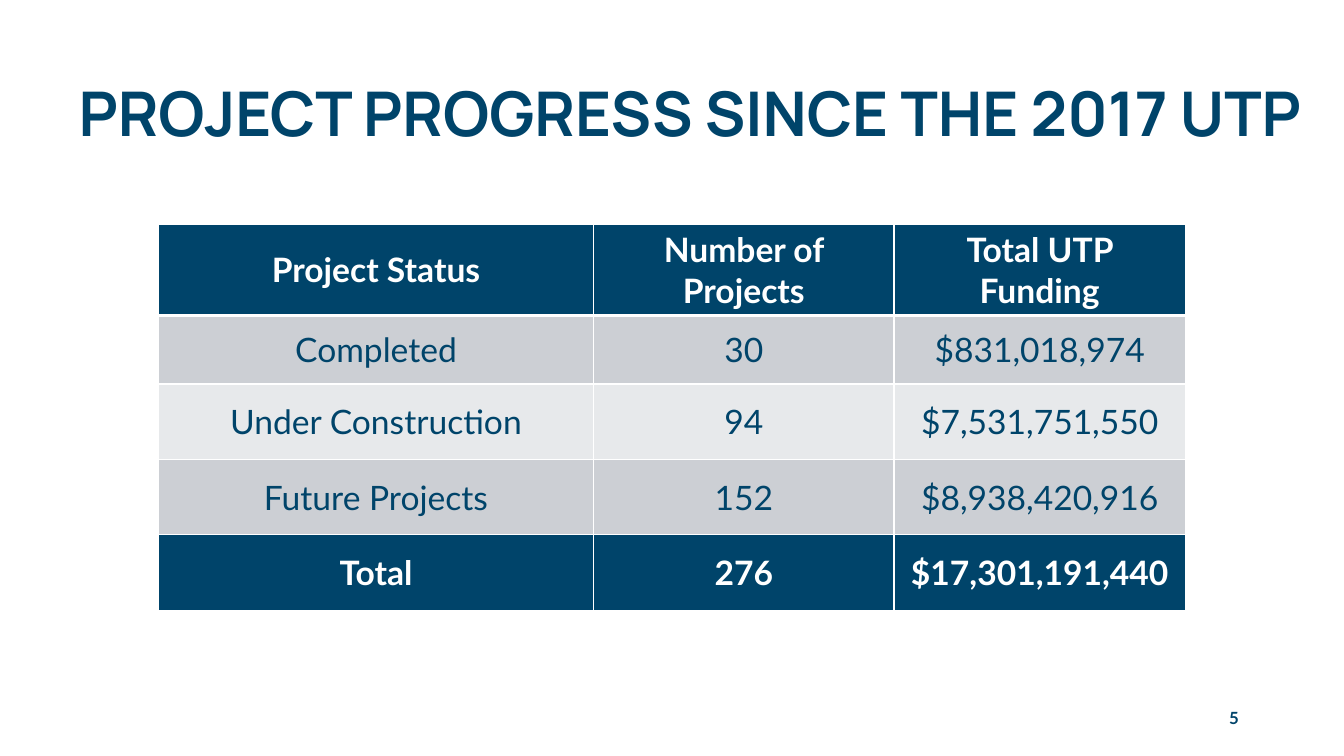
from dataclasses import dataclass

from lxml import etree
from pptx import Presentation
from pptx import util as u
from pptx.dml import color
from pptx.enum import text
from pptx.oxml import ns


@dataclass(frozen=True)
class Theme:
    navy: str = "00446A"
    white: str = "FFFFFF"
    grey: str = "CCCFD4"
    pale: str = "E7E9EB"
    heading: str = "Manrope"
    body: str = "Lato"
    title_size: int = 44
    table_size: int = 24
    number_size: int = 12
    rule: float = 1
    header_rule: float = 3


THEME = Theme()
COLUMNS = (10.97, 7.57, 7.34)
HEIGHTS = (2.26, 1.73, 1.9, 1.9, 1.9)
ROWS = (
    ("Project Status", "Number of Projects", "Total UTP Funding"),
    ("Completed", "30", "$831,018,974"),
    ("Under Construction", "94", "$7,531,751,550"),
    ("Future Projects", "152", "$8,938,420,916"),
    ("Total", "276", "$17,301,191,440"),
)


def apply(target, formats):
    for name, value in formats.items():
        setattr(target, name, value)


def write(tf, words, font, size, rgb, bold, paragraph):
    apply(tf, {"word_wrap": True, "vertical_anchor": text.MSO_ANCHOR.MIDDLE})
    p = tf.paragraphs[0]
    apply(p, paragraph)
    r = p.add_run()
    r.text = words
    apply(r.font, {"name": font, "size": u.Pt(size), "bold": bold})
    r.font.color.rgb = color.RGBColor.from_string(rgb)


def add_text(s, box, words, font, size, paragraph):
    sp = s.shapes.add_textbox(*map(u.Cm, box))
    write(sp.text_frame, words, font, size, THEME.navy, True, paragraph)


def add_border(cell, side, width):
    tc_pr = cell._tc.get_or_add_tcPr()
    ln = etree.SubElement(tc_pr, ns.qn(f"a:ln{side}"), w=str(u.Pt(width)))
    fill = etree.SubElement(ln, ns.qn("a:solidFill"))
    etree.SubElement(fill, ns.qn("a:srgbClr"), val=THEME.white)


def format_cell(cell, words, row):
    strong = row in (0, len(ROWS) - 1)
    widths = {"L": THEME.rule, "R": THEME.rule,
              "T": THEME.header_rule if row == 1 else THEME.rule,
              "B": THEME.header_rule if row == 0 else THEME.rule}
    for side, width in widths.items():
        add_border(cell, side, width)
    band = THEME.grey if row % 2 else THEME.pale
    cell.fill.solid()
    cell.fill.fore_color.rgb = color.RGBColor.from_string(THEME.navy if strong else band)
    cell.vertical_anchor = text.MSO_ANCHOR.MIDDLE
    write(cell.text_frame, words, THEME.body, THEME.table_size,
          THEME.white if strong else THEME.navy, strong,
          {"alignment": text.PP_ALIGN.CENTER})


def add_funding_table(s, left, top):
    frame = s.shapes.add_table(len(ROWS), len(COLUMNS), u.Cm(left), u.Cm(top),
                               u.Cm(sum(COLUMNS)), u.Cm(sum(HEIGHTS)))
    table = frame.table
    for column, width in zip(table.columns, COLUMNS):
        column.width = u.Cm(width)
    for i, (height, values) in enumerate(zip(HEIGHTS, ROWS)):
        table.rows[i].height = u.Cm(height)
        for j, words in enumerate(values):
            format_cell(table.cell(i, j), words, i)


def main():
    prs = Presentation()
    apply(prs, {"slide_width": u.Cm(33.87), "slide_height": u.Cm(19.05)})
    s = prs.slides.add_slide(prs.slide_layouts[6])
    add_text(s, (1.73, 1.4, 31.88, 3.05), "PROJECT PROGRESS SINCE THE 2017 UTP",
             THEME.heading, THEME.title_size, {"line_spacing": 0.9})
    add_funding_table(s, 3.99, 5.66)
    add_text(s, (23.85, 17.58, 7.62, 1.02), "5", THEME.body, THEME.number_size,
             {"alignment": text.PP_ALIGN.RIGHT})
    prs.save("out.pptx")


if __name__ == "__main__":
    main()
